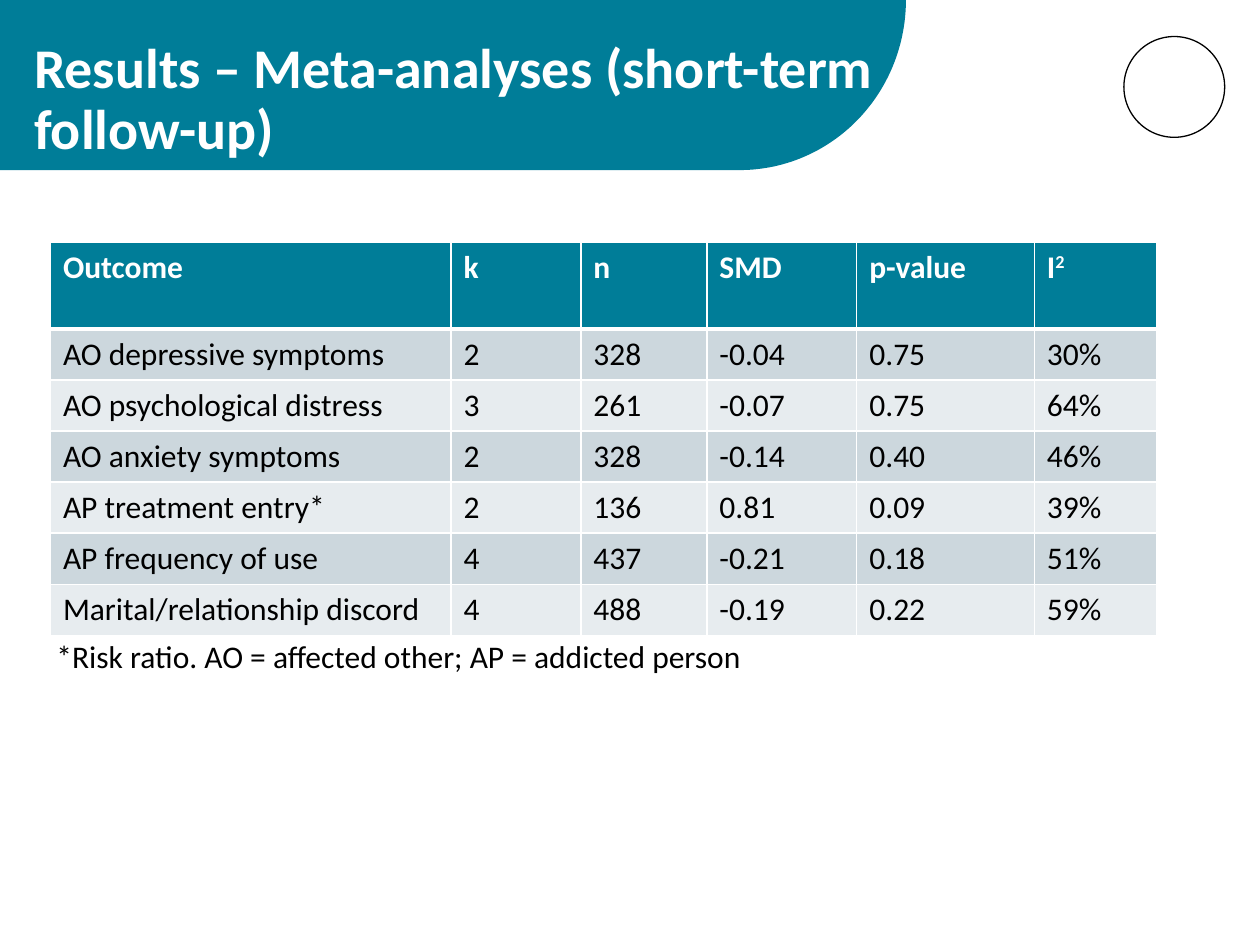
"""Build the short-term follow-up meta-analysis results slide."""
from math import cos, pi, sin

from lxml import etree
from pptx import Presentation
from pptx.dml.color import RGBColor
from pptx.enum.shapes import MSO_SHAPE
from pptx.enum.text import MSO_ANCHOR, MSO_AUTO_SIZE, PP_ALIGN
from pptx.oxml.ns import qn
from pptx.util import Inches, Pt

OVAL = MSO_SHAPE.OVAL
TOP = MSO_ANCHOR.TOP
LEFT = PP_ALIGN.LEFT
GROW = MSO_AUTO_SIZE.SHAPE_TO_FIT_TEXT
NO_FIT = MSO_AUTO_SIZE.NONE

TEAL = RGBColor(0x00, 0x7D, 0x98)
WHITE = RGBColor(0xFF, 0xFF, 0xFF)
BLACK = RGBColor(0x00, 0x00, 0x00)
DARK_BAND = RGBColor(0xCC, 0xD7, 0xDD)
LIGHT_BAND = RGBColor(0xE7, 0xEC, 0xEF)
FONT = "Calibri"

TITLE = "Results – Meta-analyses (short-term follow-up)"
FOOTNOTE = "*Risk ratio. AO = affected other; AP = addicted person"
ROWS = [
    ("Outcome", "k", "n", "SMD", "p-value", "I2"),
    ("AO depressive symptoms", "2", "328", "-0.04", "0.75", "30%"),
    ("AO psychological distress", "3", "261", "-0.07", "0.75", "64%"),
    ("AO anxiety symptoms", "2", "328", "-0.14", "0.40", "46%"),
    ("AP treatment entry*", "2", "136", "0.81", "0.09", "39%"),
    ("AP frequency of use", "4", "437", "-0.21", "0.18", "51%"),
    ("Marital/relationship discord", "4", "488", "-0.19", "0.22", "59%"),
]
COLUMN_WIDTHS = (3.18, 1.03, 1, 1.19, 1.41, 0.97)
HEADER_HEIGHT, ROW_HEIGHT = 0.69, 0.4
BANNER_WIDTH, BANNER_HEIGHT, CURVE_START = 7.19, 1.35, 5.87
CURVE_STEPS = 60


def format_text(paragraph, size, color, bold=False):
    paragraph.alignment = LEFT
    for span in paragraph.runs:
        span.font.name = FONT
        span.font.size = Pt(size)
        span.font.bold = bold
        span.font.color.rgb = color


def add_banner(page):
    radius = BANNER_WIDTH - CURVE_START
    angles = [pi / 2 * step / CURVE_STEPS for step in range(CURVE_STEPS + 1)]
    curve = [(Inches(CURVE_START + radius * cos(angle)),
              Inches(BANNER_HEIGHT * sin(angle))) for angle in angles]
    builder = page.shapes.build_freeform(0, 0)
    builder.add_line_segments(curve + [(0, Inches(BANNER_HEIGHT))], close=True)
    banner = builder.convert_to_shape()
    banner.shadow.inherit = False
    banner.fill.solid()
    banner.fill.fore_color.rgb = TEAL
    banner.line.fill.background()


def add_ring(page):
    ring = page.shapes.add_shape(
        OVAL, Inches(8.92), Inches(0.29), Inches(0.8), Inches(0.8))
    ring.shadow.inherit = False
    ring.fill.background()
    ring.line.color.rgb = BLACK
    ring.line.width = Pt(0.75)


def set_title(page):
    title = page.shapes.title
    title.left, title.top = Inches(0.17), Inches(0.27)
    title.width, title.height = Inches(6.99), Inches(0.89)
    frame = title.text_frame
    frame.text = TITLE
    frame.word_wrap = True
    frame.auto_size = NO_FIT
    frame.vertical_anchor = TOP
    frame.paragraphs[0].line_spacing = 0.9
    format_text(frame.paragraphs[0], 32, WHITE, True)
    page.shapes._spTree.append(title._element)


def set_borders(cell, bottom_width):
    properties = cell._tc.get_or_add_tcPr()
    for side, width in (("L", 1), ("R", 1), ("T", 1), ("B", bottom_width)):
        border = etree.SubElement(properties, qn(f"a:ln{side}"), w=str(Pt(width)))
        fill = etree.SubElement(border, qn("a:solidFill"))
        etree.SubElement(fill, qn("a:srgbClr"), val=str(WHITE))


def add_results(page):
    height = HEADER_HEIGHT + ROW_HEIGHT * (len(ROWS) - 1)
    table = page.shapes.add_table(
        len(ROWS), len(COLUMN_WIDTHS), Inches(0.4), Inches(1.92),
        Inches(sum(COLUMN_WIDTHS)), Inches(height)).table
    for column, width in zip(table.columns, COLUMN_WIDTHS):
        column.width = Inches(width)
    for index, values in enumerate(ROWS):
        header = index == 0
        band = TEAL if header else DARK_BAND if index % 2 else LIGHT_BAND
        table.rows[index].height = Inches(HEADER_HEIGHT if header else ROW_HEIGHT)
        for cell, value in zip(table.rows[index].cells, values):
            set_borders(cell, 3 if header else 1)
            cell.fill.solid()
            cell.fill.fore_color.rgb = band
            para = cell.text_frame.paragraphs[0]
            if value == "I2":
                para.text = "I"
                power = para.add_run()
                power.text = "2"
                power.font._element.set("baseline", "30000")
            else:
                para.text = value
            format_text(para, 18, WHITE if header else BLACK, header)


def add_footnote(page):
    box = page.shapes.add_textbox(
        Inches(0.35), Inches(5.01), Inches(6.13), Inches(0.4))
    frame = box.text_frame
    frame.text = FOOTNOTE
    frame.word_wrap = True
    frame.auto_size = GROW
    format_text(frame.paragraphs[0], 18, BLACK)


def main():
    deck = Presentation()
    deck.slide_width, deck.slide_height = Inches(10), Inches(7.5)
    page = deck.slides.add_slide(deck.slide_layouts[5])
    add_banner(page)
    add_ring(page)
    set_title(page)
    add_results(page)
    add_footnote(page)
    deck.save("out.pptx")


if __name__ == "__main__":
    main()
